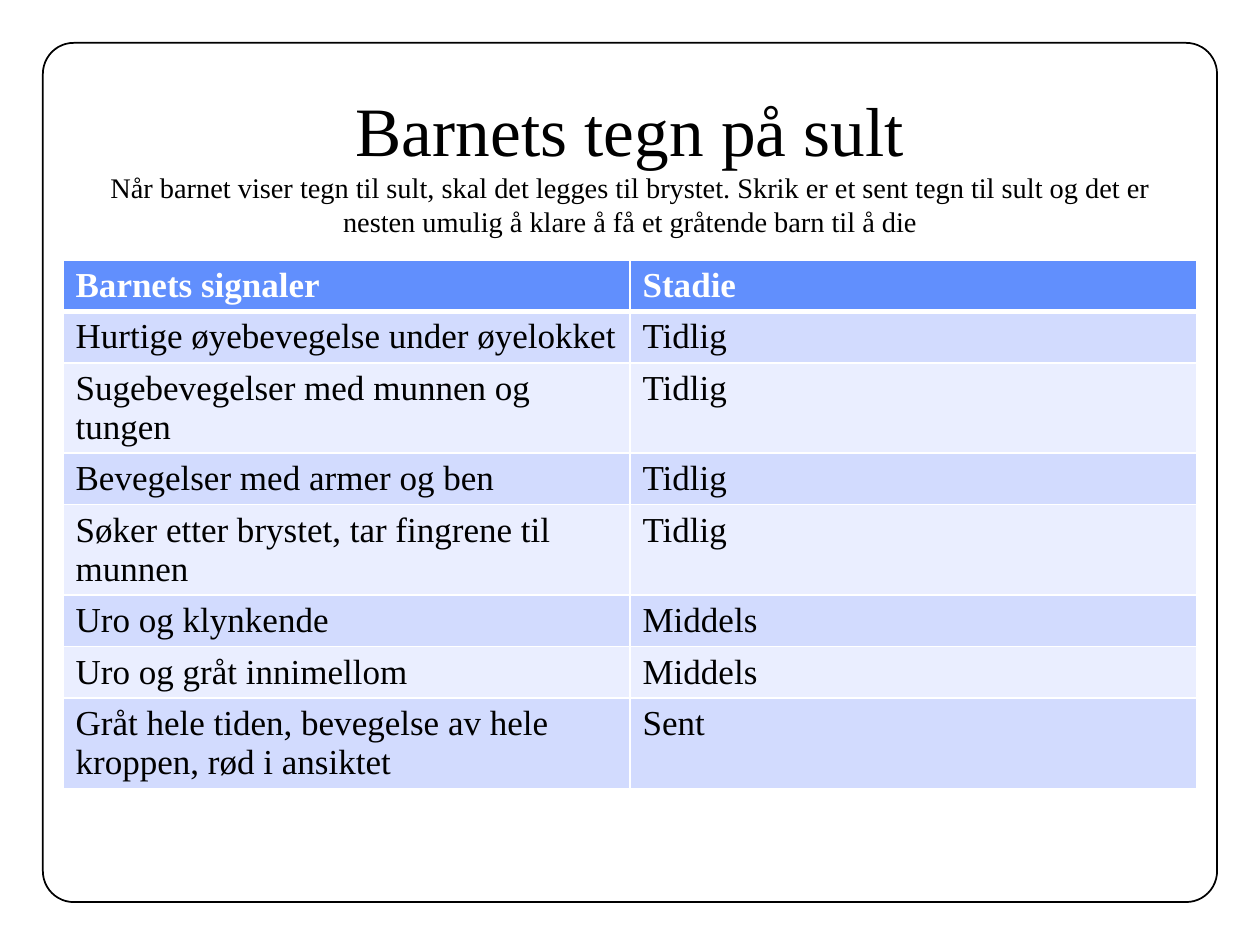
from lxml import etree
from pptx import Presentation
from pptx.dml.color import RGBColor
from pptx.enum.shapes import MSO_SHAPE
from pptx.enum.text import MSO_ANCHOR, MSO_AUTO_SIZE, PP_ALIGN
from pptx.oxml.ns import qn
from pptx.util import Pt

ROUNDED = MSO_SHAPE.ROUNDED_RECTANGLE
MIDDLE = MSO_ANCHOR.MIDDLE
NO_AUTOFIT = MSO_AUTO_SIZE.NONE
CENTER = PP_ALIGN.CENTER

TITLE_ONLY_LAYOUT = 5
FONT = "Times New Roman"
BLACK, WHITE = "000000", "FFFFFF"
HEADER_FILL = "618FFD"
BAND_FILLS = ("D2DBFE", "EAEEFF")

TITLE = "Barnets tegn på sult"
SUBTITLE = (
    "Når barnet viser tegn til sult, skal det legges til brystet. "
    "Skrik er et sent tegn til sult og det er nesten umulig å klare "
    "å få et gråtende barn til å die"
)
SIGNALS = [
    ("Barnets signaler", "Stadie"),
    ("Hurtige øyebevegelse under øyelokket", "Tidlig"),
    ("Sugebevegelser med munnen og tungen", "Tidlig"),
    ("Bevegelser med armer og ben", "Tidlig"),
    ("Søker etter brystet, tar fingrene til munnen", "Tidlig"),
    ("Uro og klynkende", "Middels"),
    ("Uro og gråt innimellom", "Middels"),
    ("Gråt hele tiden, bevegelse av hele kroppen, rød i ansiktet", "Sent"),
]


def color(hex_string):
    return RGBColor.from_string(hex_string)


def add_run(paragraph, text, size, hex_color=BLACK, bold=False):
    run = paragraph.add_run()
    run.text = text
    run.font.name = FONT
    run.font.size = Pt(size)
    run.font.bold = bold
    run.font.color.rgb = color(hex_color)


def add_frame(slide, left, top, width, height):
    """Draw the rounded outline behind everything else."""
    frame = slide.shapes.add_shape(ROUNDED, Pt(left), Pt(top), Pt(width), Pt(height))
    frame.adjustments[0] = 0.036
    frame.shadow.inherit = False
    frame.fill.background()
    frame.line.color.rgb = color(BLACK)
    frame.line.width = Pt(1)
    slide.shapes.title.element.addprevious(frame.element)


def fill_title(slide, left, top, width, height):
    title = slide.shapes.title
    title.left, title.top = Pt(left), Pt(top)
    title.width, title.height = Pt(width), Pt(height)
    text_frame = title.text_frame
    text_frame.word_wrap = True
    text_frame.auto_size = NO_AUTOFIT
    text_frame.vertical_anchor = MIDDLE
    paragraph = text_frame.paragraphs[0]
    paragraph.alignment = CENTER
    add_run(paragraph, TITLE, 39.6)
    paragraph.add_line_break()
    add_run(paragraph, SUBTITLE, 16.2)


def set_borders(cell, bottom_width):
    """Give a cell white borders, placed ahead of its fill as the schema asks."""
    properties = cell._tc.get_or_add_tcPr()
    widths = {"lnL": 1, "lnR": 1, "lnT": 1, "lnB": bottom_width}
    for position, (side, width) in enumerate(widths.items()):
        border = etree.Element(qn(f"a:{side}"), w=str(Pt(width)))
        fill = etree.SubElement(border, qn("a:solidFill"))
        etree.SubElement(fill, qn("a:srgbClr"), val=WHITE)
        properties.insert(position, border)


def add_signal_table(slide, left, top, width, height):
    row_count, column_count = len(SIGNALS), len(SIGNALS[0])
    table = slide.shapes.add_table(
        row_count, column_count, Pt(left), Pt(top), Pt(width), Pt(height)
    ).table
    for row_index, texts in enumerate(SIGNALS):
        is_header = row_index == 0
        fill = HEADER_FILL if is_header else BAND_FILLS[(row_index - 1) % 2]
        for column_index, text in enumerate(texts):
            cell = table.cell(row_index, column_index)
            cell.fill.solid()
            cell.fill.fore_color.rgb = color(fill)
            set_borders(cell, bottom_width=3 if is_header else 1)
            text_color = WHITE if is_header else BLACK
            add_run(cell.text_frame.paragraphs[0], text, 20, text_color, is_header)
    # The header's thick rule is shared with the row below it.
    for cell in table.rows[1].cells:
        cell._tc.tcPr.find(qn("a:lnT")).set("w", str(Pt(3)))


def main():
    presentation = Presentation()
    presentation.slide_width, presentation.slide_height = Pt(720), Pt(540)
    layout = presentation.slide_layouts[TITLE_ONLY_LAYOUT]
    slide = presentation.slides.add_slide(layout)
    add_frame(slide, 24.5, 24.5, 671, 491)
    fill_title(slide, 54, 48, 612, 90)
    add_signal_table(slide, 36, 148.5, 648, 235)
    presentation.save("out.pptx")


if __name__ == "__main__":
    main()
